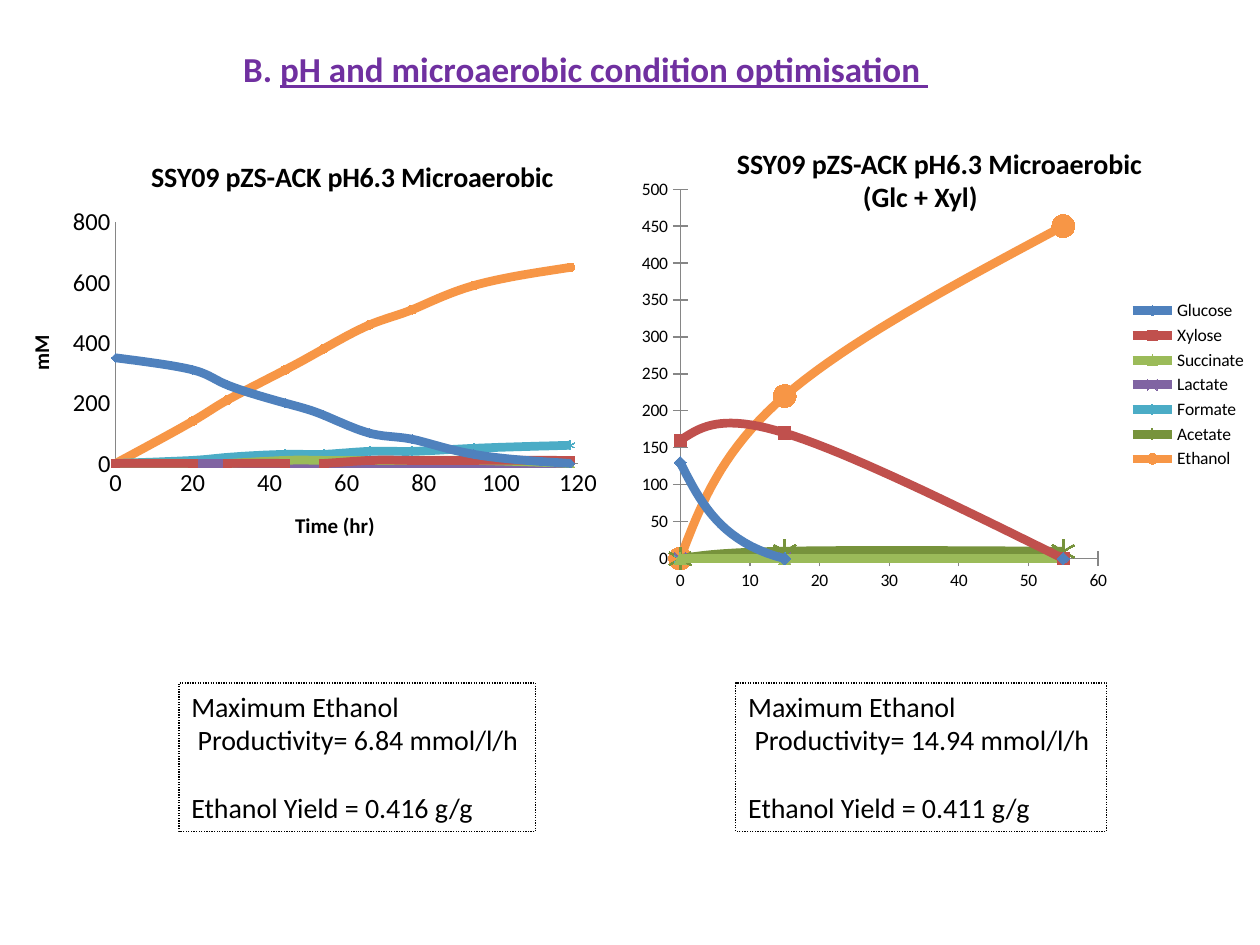
from lxml.etree import SubElement
from pptx import Presentation
from pptx.chart.data import XyChartData
from pptx.dml.color import RGBColor
from pptx.enum.chart import XL_CHART_TYPE, XL_LEGEND_POSITION, XL_MARKER_STYLE, XL_TICK_MARK
from pptx.enum.dml import MSO_LINE
from pptx.enum.shapes import MSO_SHAPE
from pptx.enum.text import MSO_ANCHOR, MSO_AUTO_SIZE, PP_ALIGN
from pptx.oxml.ns import qn
from pptx.util import Inches, Pt

BLACK, PURPLE, AXIS_GRAY = "000000", "7030A0", "868686"
PALETTE = ["4F81BD", "C0504D", "9BBB59", "8064A2", "4BACC6", "F79646"]
MARKERS = [XL_MARKER_STYLE.DIAMOND, XL_MARKER_STYLE.SQUARE, XL_MARKER_STYLE.TRIANGLE,
           XL_MARKER_STYLE.X, XL_MARKER_STYLE.STAR, XL_MARKER_STYLE.CIRCLE]
BATCH_TITLE = "SSY09 pZS-ACK pH6.3 Microaerobic"

BATCH_HOURS = [0, 20, 29, 44, 54, 66, 77, 93, 118]
BATCH_VALUES = [
    [350, 310, 260, 200, 160, 100, 80, 30, 0],
    [0, 0, 0, 0, 0, 10, 10, 10, 10],
    [0, 0, 0, 10, 10, 10, 10, 10, 0],
    [0] * 9,
    [0, 10, 20, 30, 30, 40, 40, 50, 60],
    [0, 140, 210, 310, 380, 460, 510, 590, 650],
]
BATCH_SERIES = [
    (f"Series {number}", values, color, marker, 5)
    for number, (values, color, marker) in enumerate(zip(BATCH_VALUES, PALETTE, MARKERS), 1)
]

MIXED_HOURS = [0, 15, 55]
MIXED_SERIES = [
    ("Glucose", [130, 0, 0], PALETTE[0], MARKERS[0], 7),
    ("Xylose", [160, 170, 0], PALETTE[1], MARKERS[1], 7),
    ("Succinate", [0, 0, 0], PALETTE[2], MARKERS[2], 7),
    ("Lactate", [0, 0, 0], PALETTE[3], MARKERS[3], 7),
    ("Formate", [0, 0, 0], PALETTE[4], MARKERS[4], 7),
    ("Acetate", [0, 10, 10], "77933C", XL_MARKER_STYLE.STAR, 13),
    ("Ethanol", [0, 220, 450], PALETTE[5], XL_MARKER_STYLE.CIRCLE, 13),
]


def rgb(color):
    return RGBColor.from_string(color)


def apply(target, values):
    for name, value in values.items():
        setattr(target, name, value)


def set_layout(parent, position, places):
    layout = parent.find(qn("c:layout"))
    if layout is None:
        layout = parent.makeelement(qn("c:layout"))
        parent.insert(position, layout)
    for child in list(layout):
        layout.remove(child)
    manual = SubElement(layout, qn("c:manualLayout"))
    for name, value in places.items():
        SubElement(manual, qn(f"c:{name}")).set("val", str(value))


class SlideBuilder:
    def __init__(self, slide, font="Calibri"):
        self.slide = slide
        self.font = font

    def style(self, font, size, color=BLACK, **values):
        apply(font, {"name": self.font, "size": Pt(size), **values})
        font.color.rgb = rgb(color)

    def title(self, spans, area):
        box = self.slide.shapes.title
        apply(box, dict(zip(("left", "top", "width", "height"), map(Inches, area))))
        apply(box.text_frame, {"word_wrap": True, "vertical_anchor": MSO_ANCHOR.TOP,
                               "auto_size": MSO_AUTO_SIZE.NONE})
        para = box.text_frame.paragraphs[0]
        para.alignment = PP_ALIGN.LEFT
        for text, underline in spans:
            span = para.add_run()
            span.text = text
            self.style(span.font, 20, PURPLE, bold=True, underline=underline)

    def add_lines(self, frame, lines, **values):
        for index, text in enumerate(lines):
            para = frame.paragraphs[0] if index == 0 else frame.add_paragraph()
            para.alignment = PP_ALIGN.LEFT
            span = para.add_run()
            span.text = text
            self.style(span.font, 16, **values)
        return frame.paragraphs[-1]

    def caption(self, lines, area, indent):
        box = self.slide.shapes.add_textbox(*map(Inches, area))
        box.text_frame.word_wrap = True
        last = self.add_lines(box.text_frame, lines, bold=True)
        last._p.get_or_add_pPr().set("marL", str(Inches(indent)))

    def result(self, lines, area):
        box = self.slide.shapes.add_shape(MSO_SHAPE.RECTANGLE, *map(Inches, area))
        box.shadow.inherit = False
        box.fill.background()
        box.line.color.rgb = rgb(BLACK)
        apply(box.line, {"width": Pt(0.75), "dash_style": MSO_LINE.ROUND_DOT})
        apply(box.text_frame, {"word_wrap": False, "vertical_anchor": MSO_ANCHOR.TOP})
        last = self.add_lines(box.text_frame, lines)
        last.space_before = Pt(19.5)

    def axis(self, axis, top, step, size, tick, title=None):
        apply(axis, {"minimum_scale": 0, "maximum_scale": top, "major_unit": step,
                     "has_major_gridlines": False, "major_tick_mark": tick,
                     "minor_tick_mark": XL_TICK_MARK.NONE, "has_title": bool(title)})
        axis.format.line.color.rgb = rgb(AXIS_GRAY)
        self.style(axis.tick_labels.font, size)
        if title:
            self.chart_text(axis.axis_title.text_frame, title, 12)

    def chart_text(self, frame, text, size):
        frame.text = text
        self.style(frame.paragraphs[0].runs[0].font, size, bold=True)

    def scatter(self, area, hours, series_list, plot_area, x_axis, y_axis, size, tick):
        data = XyChartData()
        for name, values, *_ in series_list:
            series = data.add_series(name)
            for hour, value in zip(hours, values):
                series.add_data_point(hour, value)
        chart = self.slide.shapes.add_chart(
            XL_CHART_TYPE.XY_SCATTER_SMOOTH, *map(Inches, area), data).chart
        apply(chart, {"has_title": False, "has_legend": False})
        self.style(chart.font, size)
        plot = chart.plots[0]
        plot.vary_by_categories = False
        for series, (_, _, color, marker, marker_size) in zip(plot.series, series_list):
            series.format.line.width = Pt(5)
            series.format.line.color.rgb = rgb(color)
            apply(series.marker, {"style": marker, "size": marker_size})
            series.marker.format.fill.solid()
            series.marker.format.fill.fore_color.rgb = rgb(color)
            series.marker.format.line.color.rgb = rgb(color)
        for smooth in chart.element.iter(qn("c:smooth")):
            smooth.set("val", "1")
        self.axis(chart.category_axis, *x_axis[:2], size, tick, *x_axis[2:])
        self.axis(chart.value_axis, *y_axis[:2], size, tick, *y_axis[2:])
        places = {"layoutTarget": "inner", "xMode": "edge", "yMode": "edge"}
        places.update(zip("xywh", plot_area))
        set_layout(next(chart.element.iter(qn("c:plotArea"))), 0, places)
        return chart

    def chart_title(self, chart, text, left, top):
        chart.has_title = True
        self.chart_text(chart.chart_title.text_frame, text, 16)
        title = chart.element.find(f"{qn('c:chart')}/{qn('c:title')}")
        set_layout(title, 1, {"xMode": "edge", "yMode": "edge", "x": left, "y": top})

    def legend(self, chart):
        chart.has_legend = True
        apply(chart.legend, {"position": XL_LEGEND_POSITION.RIGHT, "include_in_layout": False})
        self.style(chart.legend.font, 10)


def main():
    deck = Presentation()
    apply(deck, {"slide_width": Inches(10), "slide_height": Inches(7.5)})
    page = SlideBuilder(deck.slides.add_slide(deck.slide_layouts[5]))
    page.title([("B. ", False), ("pH and microaerobic condition optimisation ", True)],
               (1.83, 0.33, 7.67, 0.44))

    batch = page.scatter((0, 1.08, 4.83, 3.42), BATCH_HOURS, BATCH_SERIES,
                         (0.19, 0.2, 0.76, 0.56), (120, 20, "Time (hr)"), (800, 200, "mM"),
                         14, XL_TICK_MARK.NONE)
    page.chart_title(batch, BATCH_TITLE, 0.24, 0.04)

    mixed = page.scatter((4.65, 1.33, 5.35, 3.45), MIXED_HOURS, MIXED_SERIES,
                         (0.14, 0.05, 0.62, 0.85), (60, 10), (500, 50),
                         10, XL_TICK_MARK.CROSS)
    page.legend(mixed)
    page.caption([BATCH_TITLE, "(Glc + Xyl)"], (5.75, 1.11, 3.67, 0.91), 1)

    for left, width, productivity, ethanol_yield in [(1.42, 2.83, "6.84", "0.416"),
                                                     (5.84, 2.94, "14.94", "0.411")]:
        page.result(["Maximum Ethanol", f" Productivity= {productivity} mmol/l/h",
                     f"Ethanol Yield = {ethanol_yield} g/g"], (left, 5.42, width, 1.18))
    deck.save("out.pptx")


if __name__ == "__main__":
    main()
